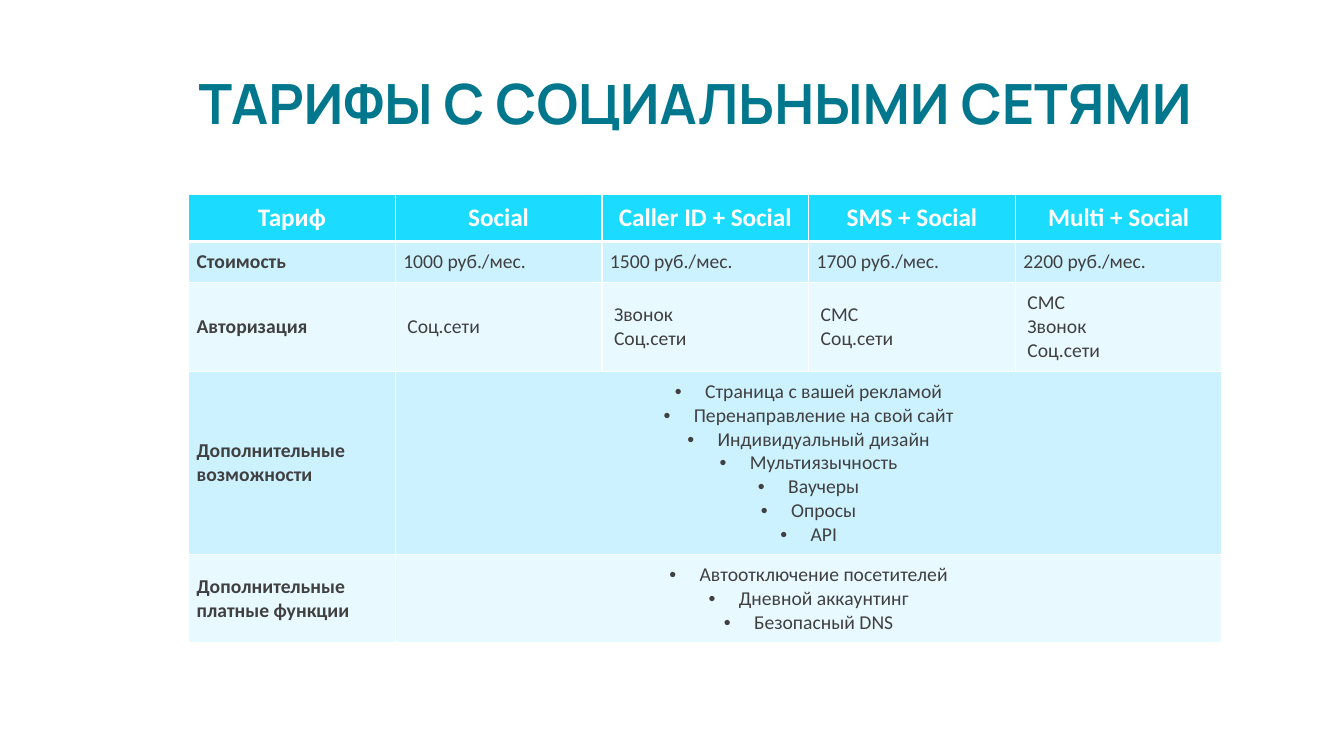
from lxml import etree
from pptx import Presentation
from pptx import util as u
from pptx.dml.color import RGBColor
from pptx.enum import text
from pptx.oxml.ns import qn

HUES = {"title": "00778D", "head": "1BDCFF", "dark": "CDF2FF",
        "light": "E8F9FF", "ink": "404040", "line": "FFFFFF"}
LEFT, TOP, COL = 1.87, 1.93, 2.05
ROWS = [0.46, 0.41, 0.88, 1.82, 0.87]
PAD = 0.08
PLANS = [
    ["Тариф", "Social", "Caller ID + Social", "SMS + Social", "Multi + Social"],
    ["Стоимость"] + [f"{price} руб./мес." for price in (1000, 1500, 1700, 2200)],
    ["Авторизация", "Соц.сети", "Звонок\vСоц.сети", "СМС\vСоц.сети",
     "СМС\vЗвонок\vСоц.сети"],
]
EXTRAS = [
    ("Дополнительные\vвозможности",
     ["Страница с вашей рекламой", "Перенаправление на свой сайт",
      "Индивидуальный дизайн", "Мультиязычность", "Ваучеры", "Опросы", "API"]),
    ("Дополнительные платные функции",
     ["Автоотключение посетителей", "Дневной аккаунтинг", "Безопасный DNS"]),
]


def hue(name):
    return RGBColor.from_string(HUES[name])


def style(font, face, size, color, bold):
    font.name, font.size, font.bold = face, u.Pt(size), bold
    font.color.rgb = hue(color)


def edge(cell, base):
    props = cell._tc.get_or_add_tcPr()
    for spot, side in enumerate(("L", "R", "T", "B")):
        width = base if side == "B" else 1
        line = etree.Element(qn(f"a:ln{side}"), w=str(u.Pt(width)))
        fill = etree.SubElement(line, qn("a:solidFill"))
        etree.SubElement(fill, qn("a:srgbClr"), val=HUES["line"])
        props.insert(spot, line)


def bullet(para):
    props = para._p.get_or_add_pPr()
    props.set("marL", str(u.Inches(0.3)))
    props.set("indent", str(-u.Inches(0.3)))
    etree.SubElement(props, qn("a:buFont"), typeface="Arial")
    etree.SubElement(props, qn("a:buChar"), char="•")


def write(cell, lines, row, first, listed=False):
    head = row == 0
    cell.fill.solid()
    cell.fill.fore_color.rgb = hue("head" if head else "dark" if row % 2 else "light")
    cell.margin_left = cell.margin_right = u.Inches(PAD)
    cell.margin_top = cell.margin_bottom = u.Inches(PAD)
    if row == 2 and not first:
        cell.margin_left = u.Inches(PAD + 0.04)
    cell.vertical_anchor = text.MSO_ANCHOR.BOTTOM if head else text.MSO_ANCHOR.MIDDLE
    edge(cell, 3 if head else 1)
    frame = cell.text_frame
    for spot, line in enumerate(lines):
        para = frame.add_paragraph() if spot else frame.paragraphs[0]
        para.text = line
        if listed:
            bullet(para)
        if head or listed:
            para.alignment = text.PP_ALIGN.CENTER
        style(para.font, "Calibri", 18 if head else 14,
              "line" if head else "ink", head or first)


def title(slide):
    shape = slide.shapes.title
    shape.left, shape.top = u.Inches(LEFT), u.Inches(0.59)
    shape.width, shape.height = u.Inches(10.41), u.Inches(0.81)
    frame = shape.text_frame
    frame.vertical_anchor = text.MSO_ANCHOR.BOTTOM
    para = frame.paragraphs[0]
    para.text = "ТАРИФЫ С СОЦИАЛЬНЫМИ СЕТЯМИ"
    para.alignment = text.PP_ALIGN.LEFT
    para.line_spacing = 0.85
    style(para.font, "Manrope", 39.6, "title", True)


def rates(slide):
    count = len(PLANS[0])
    grid = slide.shapes.add_table(
        len(ROWS), count, u.Inches(LEFT), u.Inches(TOP),
        u.Inches(COL * count), u.Inches(sum(ROWS))).table
    for row, height in zip(grid.rows, ROWS):
        row.height = u.Inches(height)
    for row, plan in enumerate(PLANS):
        for col, words in enumerate(plan):
            write(grid.cell(row, col), [words], row, col == 0)
    for row, (name, items) in enumerate(EXTRAS, len(PLANS)):
        write(grid.cell(row, 0), [name], row, True)
        grid.cell(row, 1).merge(grid.cell(row, count - 1))
        write(grid.cell(row, 1), items, row, False, True)


def main():
    deck = Presentation()
    deck.slide_width, deck.slide_height = u.Inches(13.33), u.Inches(7.5)
    slide = deck.slides.add_slide(deck.slide_layouts[5])
    title(slide)
    rates(slide)
    deck.save("out.pptx")


if __name__ == "__main__":
    main()
